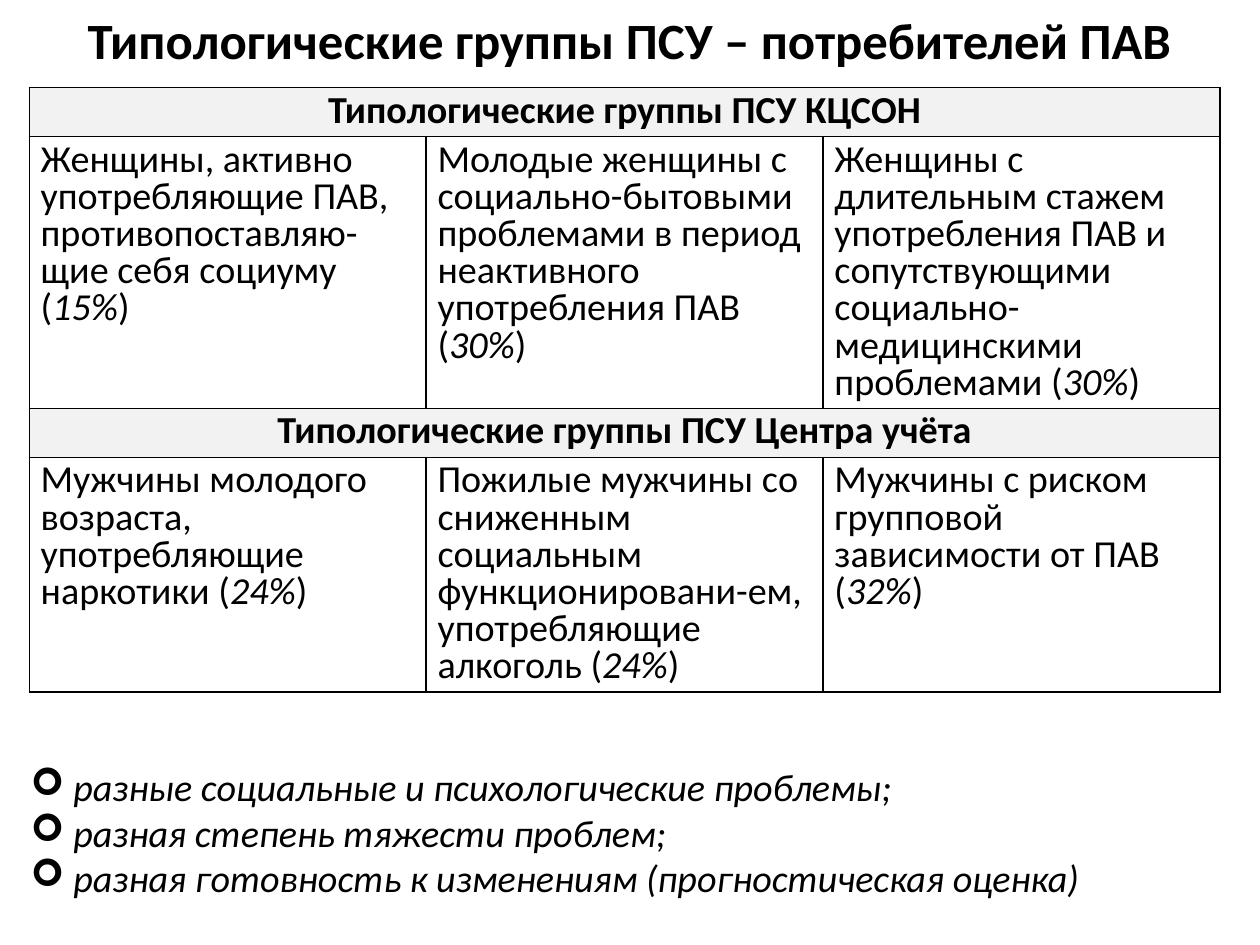
from lxml.etree import SubElement
from pptx import Presentation
from pptx.dml.color import RGBColor
from pptx.enum.text import MSO_ANCHOR, PP_ALIGN
from pptx.oxml.ns import qn
from pptx.util import Cm, Pt

INK = {"text": "000000", "head": "F2F2F2", "cell": "FFFFFF"}
FACE = "Calibri"
TITLE = "Типологические группы ПСУ – потребителей ПАВ"
GROUPS = [
    ("Типологические группы ПСУ КЦСОН", 6.02, [
        ("Женщины, активно употребляющие ПАВ, противопоставляю-щие себя социуму", "15%"),
        ("Молодые женщины с социально-бытовыми проблемами в период неактивного употребления ПАВ", "30%"),
        ("Женщины с длительным стажем употребления ПАВ и сопутствующими социально-медицинскими проблемами", "30%"),
    ]),
    ("Типологические группы ПСУ Центра учёта", 5.2, [
        ("Мужчины молодого возраста, употребляющие наркотики", "24%"),
        ("Пожилые мужчины со сниженным социальным функционировани-ем, употребляющие алкоголь", "24%"),
        ("Мужчины с риском групповой зависимости от ПАВ", "32%"),
    ]),
]
POINTS = [
    "разные социальные и психологические проблемы;",
    "разная степень тяжести проблем;",
    "разная готовность к изменениям (прогностическая оценка)",
]
HEAD = 1.09


def style(para, size=24, bold=False, slant=False):
    font = para.font
    font.name, font.size = FACE, Pt(size)
    font.bold, font.italic = bold, slant
    font.color.rgb = RGBColor.from_string(INK["text"])


def title(slide, left, top, width, height):
    shape = slide.shapes.title
    shape.left, shape.top, shape.width, shape.height = map(Cm, (left, top, width, height))
    frame = shape.text_frame
    frame.text = TITLE
    frame.vertical_anchor = MSO_ANCHOR.MIDDLE
    para = frame.paragraphs[0]
    para.alignment = PP_ALIGN.CENTER
    style(para, 32, True)


def paint(cell, key):
    props = cell._tc.get_or_add_tcPr()
    for side in ("a:lnL", "a:lnR", "a:lnT", "a:lnB"):
        line = SubElement(props, qn(side), w=str(Pt(0.96)))
        fill = SubElement(line, qn("a:solidFill"))
        SubElement(fill, qn("a:srgbClr"), val=INK["text"])
    cell.fill.solid()
    cell.fill.fore_color.rgb = RGBColor.from_string(INK[key])


def write(cell, parts, bold=False):
    para = cell.text_frame.paragraphs[0]
    para.line_spacing = 0.8
    para.alignment = PP_ALIGN.CENTER if bold else PP_ALIGN.LEFT
    style(para, bold=bold)
    for text, slant in parts:
        run = para.add_run()
        run.text = text
        if slant:
            run.font.italic = True


def groups(slide, left, top, width):
    tall = sum(HEAD + body for _, body, _ in GROUPS)
    count = len(GROUPS[0][2])
    table = slide.shapes.add_table(
        2 * len(GROUPS), count, Cm(left), Cm(top), Cm(width), Cm(tall)).table
    table.first_row = table.horz_banding = False
    for col in table.columns:
        col.width = Cm(width / count)
    for index, (name, body, cells) in enumerate(GROUPS):
        row = 2 * index
        table.rows[row].height = Cm(HEAD)
        table.rows[row + 1].height = Cm(body)
        for col, (text, share) in enumerate(cells):
            paint(table.cell(row, col), "head")
            cell = table.cell(row + 1, col)
            paint(cell, "cell")
            write(cell, [(text + " (", False), (share, True), (")", False)])
        first = table.cell(row, 0)
        first.merge(table.cell(row, count - 1))
        write(first, [(name, False)], True)


def points(slide, left, top, width, height):
    frame = slide.shapes.add_textbox(*map(Cm, (left, top, width, height))).text_frame
    frame.word_wrap = True
    for index, text in enumerate(POINTS):
        para = frame.add_paragraph() if index else frame.paragraphs[0]
        para.text = text
        props = para._p.get_or_add_pPr()
        props.set("marL", str(Cm(0.95)))
        props.set("indent", str(Cm(-0.95)))
        SubElement(props, qn("a:buFont"), typeface="Wingdings")
        SubElement(props, qn("a:buChar"), char="➢")
        style(para, slant=True)


def main():
    deck = Presentation()
    deck.slide_width, deck.slide_height = Cm(28), Cm(21)
    slide = deck.slides.add_slide(deck.slide_layouts[5])
    title(slide, 0, 0, 28, 1.75)
    groups(slide, 0.65, 1.95, 26.46)
    points(slide, 0.43, 16.84, 26.7, 3.3)
    deck.save("out.pptx")


if __name__ == "__main__":
    main()
